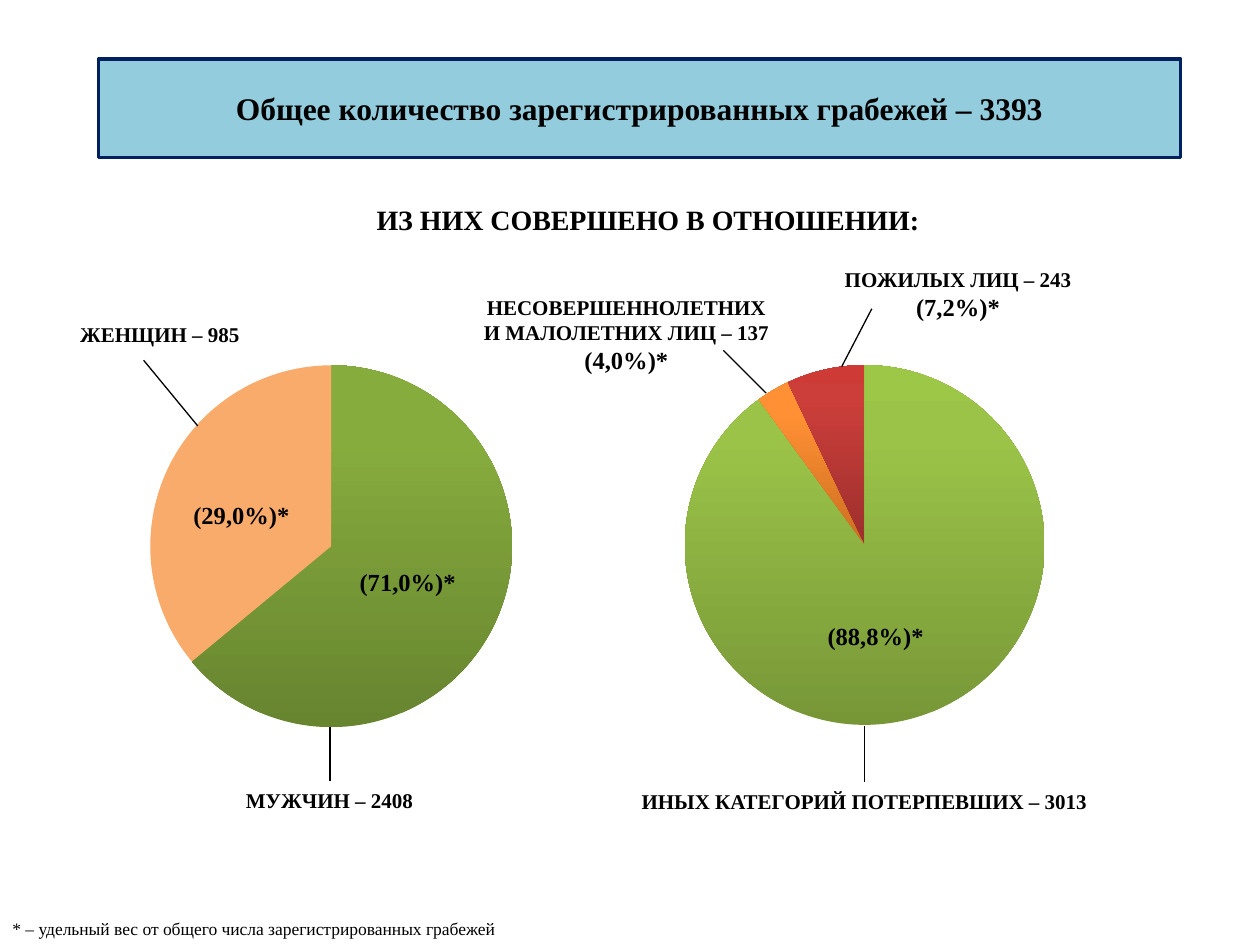
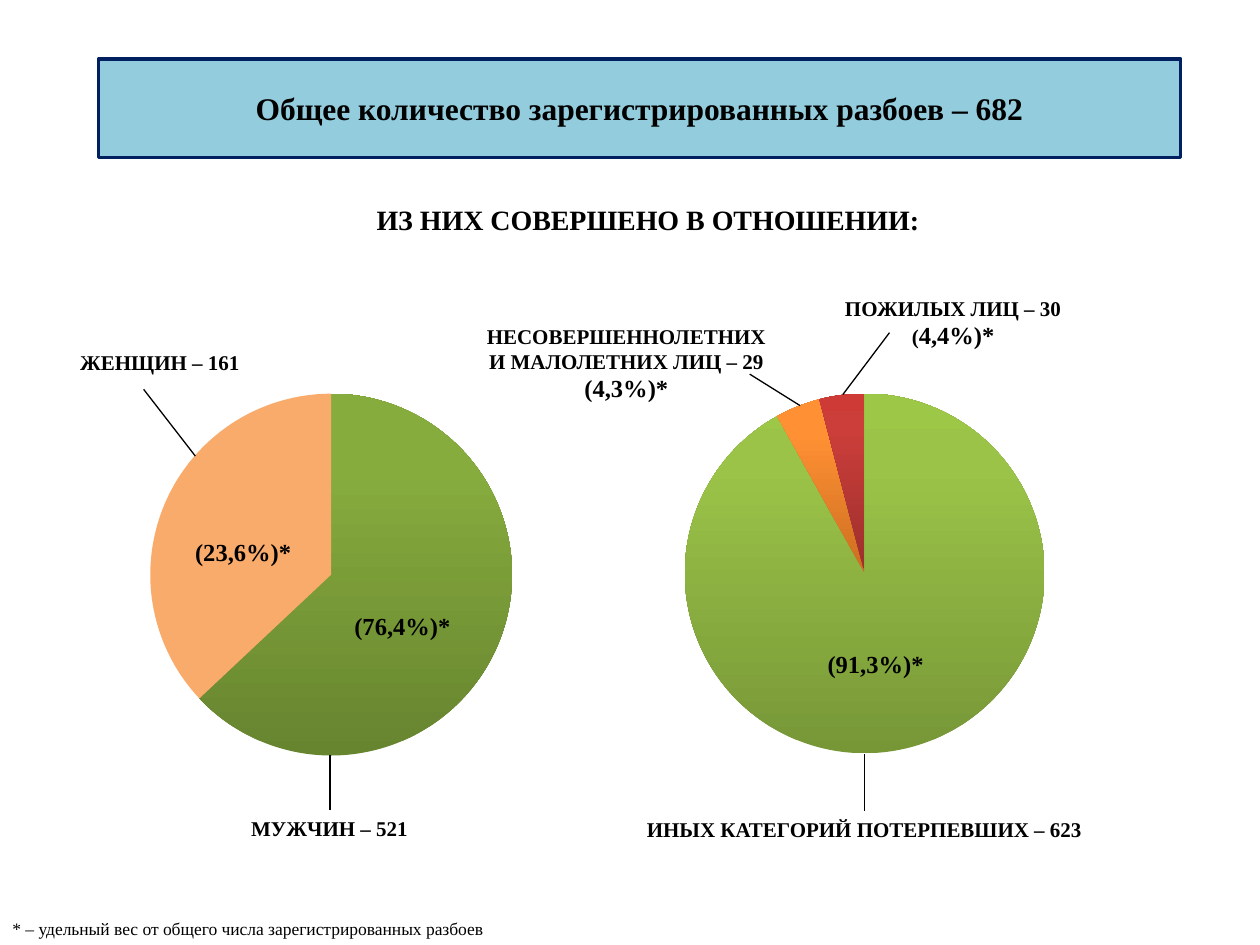
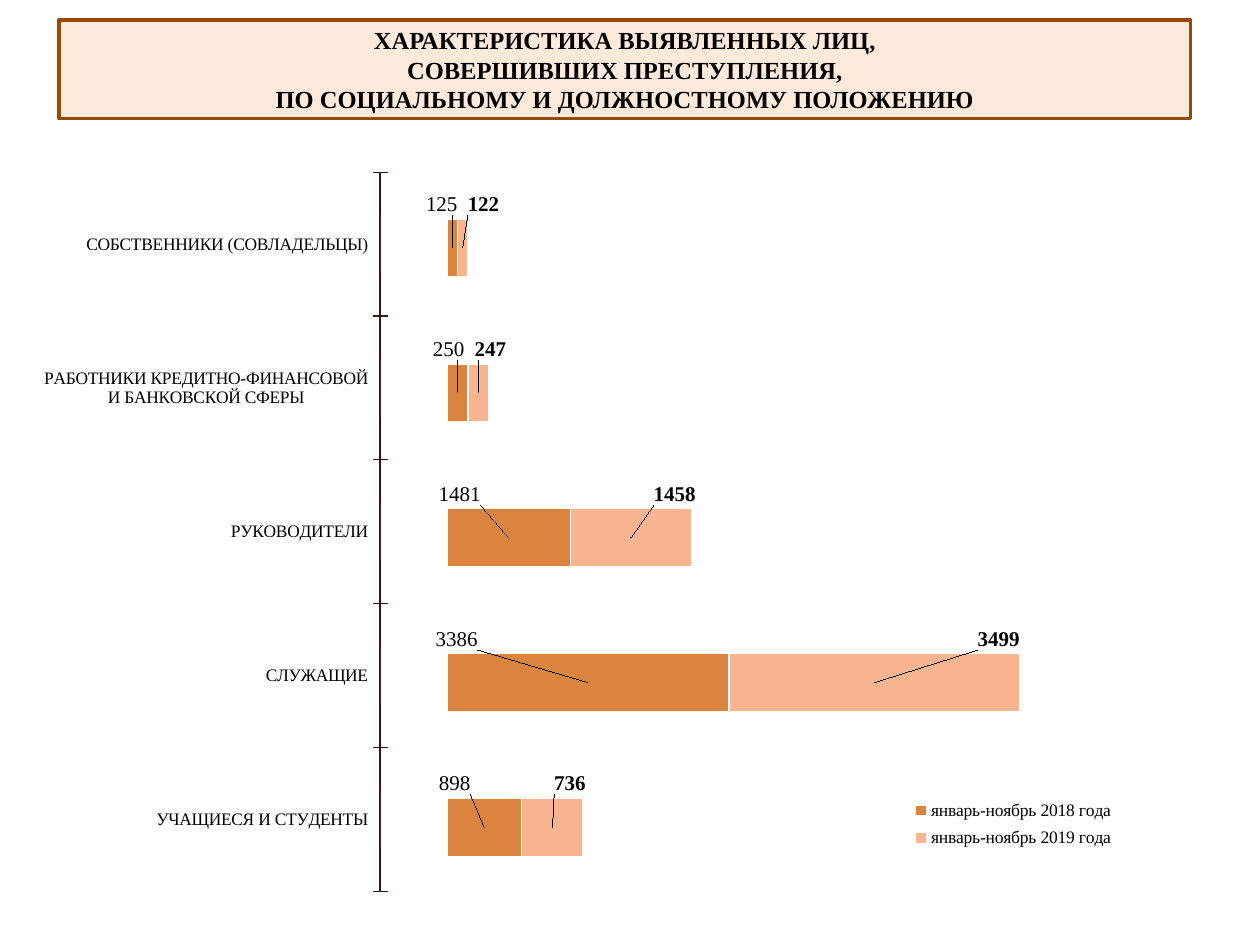
from copy import deepcopy
from dataclasses import dataclass, replace
from typing import NamedTuple

from pptx import Presentation
from pptx.chart import data as chart_data
from pptx.dml.color import RGBColor
from pptx.enum import chart as ch, shapes, text
from pptx.oxml import parse_xml
from pptx.oxml.ns import nsdecls, qn
from pptx.util import Pt


@dataclass(frozen=True)
class Theme:
    """Colours and type sizes; gradients run from the bottom up."""
    serif: str = "Times New Roman"
    chart_font: str = "Calibri"
    ink: str = "000000"
    separator: str = "FFFFFF"
    axis: str = "381514"
    crime_band: tuple = ("93CDDD", "002060")
    social_band: tuple = ("FDEADA", "984807")
    men: tuple = ("67842F", "87AC3E", "8AAE40")
    women: str = "F9AB6B"
    others: tuple = ("779737", "9BC348", "9DC746")
    minors: tuple = ("CC6E20", "FF9034", "FF9136")
    elderly: tuple = ("9C2F2D", "CB3E3A", "CE3B37")
    year_2018: str = "DB843D"
    year_2019: str = "F9B590"
    heading: float = 18
    subheading: float = 16
    share: float = 14
    label: float = 12
    small: float = 10
    band_line: float = 2
    hairline: float = 0.75


THEME = Theme()


@dataclass(frozen=True)
class Box:
    left: float
    top: float
    width: float
    height: float

    def lowered(self, drop: float) -> "Box":
        return replace(self, top=self.top + drop)

    def emu(self) -> tuple:
        return Pt(self.left), Pt(self.top), Pt(self.width), Pt(self.height)


class Words(NamedTuple):
    content: str
    size: float
    bold: bool = True


class Leader(NamedTuple):
    x1: float
    y1: float
    x2: float
    y2: float


@dataclass(frozen=True)
class CrimeReport:
    heading: str
    footnote: str
    footnote_width: float
    drop: float  # how far the pies and their labels sit below the first report's
    sexes: tuple
    ages: tuple
    women: str
    men: str
    others: str
    minors: tuple
    elderly: tuple
    elderly_width: float
    shares: tuple  # wording, left, top
    leaders: tuple


class Period(NamedTuple):
    name: str
    counts: tuple
    label_shifts: tuple  # points from the middle of each bar
    color: str
    bold: bool


CRIME_BAND = Box(56.2, 33.8, 618.5, 56.2)
SOCIAL_BAND = Box(33.8, 11.5, 646.6, 56.2)
SUBHEADING = Box(208.1, 112.3, 329, 26.6)
SEX_CHART, SEX_PLOT = Box(30.2, 199.4, 318.2, 226.8), Box(85.9, 208.8, 206.8, 206.8)
AGE_CHART, AGE_PLOT = Box(302.4, 140.4, 387.4, 334.8), Box(391.1, 208.7, 206.1, 205.6)
WOMEN = Box(33.8, 180, 115.2, 21.6)
MEN = Box(128.2, 446.4, 120.2, 21.6)
OTHERS = Box(340.6, 447.1, 306.7, 21.6)
MINORS = Box(268.6, 164.9, 178.6, 53.3)
ELDERLY = Box(473, 149, 149, 38.9)
MEN_LEADER = Leader(188.6, 415.4, 188.6, 446.4)
OTHERS_LEADER = Leader(493.9, 414.7, 493.9, 447.1)

AXIS_CHART, AXIS_PLOT = Box(25.2, 88.6, 423.4, 430.6), Box(216, 98.5, 31.3, 410.8)
BARS_CHART, BARS_PLOT = Box(229.7, 94.3, 527, 425.5), Box(255.5, 100.3, 380.5, 414)
BARS_LEGEND = Box(518, 453, 122, 36)
LABEL_RISE = -25

REPORTS = (
    CrimeReport(
        heading="Общее количество зарегистрированных грабежей – 3393",
        footnote="* – удельный вес от общего числа зарегистрированных грабежей",
        footnote_width=373, drop=0, sexes=(64, 36), ages=(90, 3, 7),
        women="ЖЕНЩИН – 985", men="МУЖЧИН – 2408",
        others="ИНЫХ КАТЕГОРИЙ ПОТЕРПЕВШИХ – 3013",
        minors=("И МАЛОЛЕТНИХ ЛИЦ – 137 ", "(4,0%)*"),
        elderly=("ПОЖИЛЫХ ЛИЦ – 243 ", "(7,2%)*"), elderly_width=149,
        shares=(("(71,0%)*", 197, 318.2), ("(29,0%)*", 102, 280.1),
                ("(88,8%)*", 464.4, 349.2)),
        leaders=(Leader(82.1, 205.9, 113, 243.4), Leader(413.3, 200.2, 437.8, 224.6),
                 Leader(481, 209.5, 498.2, 176.4)),
    ),
    CrimeReport(
        heading="Общее количество зарегистрированных разбоев – 682",
        footnote="* – удельный вес от общего числа зарегистрированных разбоев",
        footnote_width=298, drop=16.2, sexes=(63, 37), ages=(91, 4, 4),
        women="ЖЕНЩИН – 161", men="МУЖЧИН – 521",
        others="ИНЫХ КАТЕГОРИЙ ПОТЕРПЕВШИХ – 623",
        minors=("И МАЛОЛЕТНИХ ЛИЦ – 29 ", "(4,3%)*"),
        elderly=("ПОЖИЛЫХ ЛИЦ – 30 (", "4,4%)*"), elderly_width=143.3,
        shares=(("(76,4%)*", 194, 343.4), ("(23,6%)*", 103, 301),
                ("(91,3%)*", 464.4, 365.4)),
        leaders=(Leader(82.1, 222.5, 111.6, 260.6), Leader(428.4, 213.8, 457.2, 231.8),
                 Leader(481.7, 225.4, 508.3, 190.1)),
    ),
)

SOCIAL_HEADING = (
    "ХАРАКТЕРИСТИКА ВЫЯВЛЕННЫХ ЛИЦ,",
    "СОВЕРШИВШИХ ПРЕСТУПЛЕНИЯ,",
    "ПО СОЦИАЛЬНОМУ И ДОЛЖНОСТНОМУ ПОЛОЖЕНИЮ",
)
SOCIAL_GROUPS = (
    "УЧАЩИЕСЯ И СТУДЕНТЫ", "СЛУЖАЩИЕ", "РУКОВОДИТЕЛИ",
    "РАБОТНИКИ КРЕДИТНО-ФИНАНСОВОЙ И БАНКОВСКОЙ СФЕРЫ", "СОБСТВЕННИКИ (СОВЛАДЕЛЬЦЫ)",
)
PERIODS = (
    Period("январь-ноябрь 2018 года", (898, 3386, 1481, 250, 125),
           (-17, -75, -28, -5, -6), THEME.year_2018, False),
    Period("январь-ноябрь 2019 года", (736, 3499, 1458, 247, 122),
           (10, 71, 25, 7, 12), THEME.year_2019, True),
)


def rgb(color: str) -> RGBColor:
    return RGBColor.from_string(color)


def style_font(font, size: float, bold: bool = False, name: str = THEME.serif) -> None:
    font.name, font.size, font.bold = name, Pt(size), bold
    font.color.rgb = rgb(THEME.ink)


def write(frame, paragraphs: tuple, align=text.PP_ALIGN.CENTER) -> None:
    """Fill a text frame with paragraphs, each a tuple of Words."""
    for index, runs in enumerate(paragraphs):
        paragraph = frame.add_paragraph() if index else frame.paragraphs[0]
        paragraph.alignment = align
        for words in runs:
            run = paragraph.add_run()
            run.text = words.content
            style_font(run.font, words.size, words.bold)


def add_label(slide, box: Box, *paragraphs: tuple, anchor=text.MSO_ANCHOR.MIDDLE,
              align=text.PP_ALIGN.CENTER, wrap: bool = True) -> None:
    frame = slide.shapes.add_textbox(*box.emu()).text_frame
    frame.word_wrap = wrap
    frame.vertical_anchor = anchor
    write(frame, paragraphs, align)


def set_band_title(slide, box: Box, colors: tuple, lines: tuple, size: float) -> None:
    """Turn the title placeholder into a rounded, outlined band."""
    title = slide.shapes.title
    title.left, title.top, title.width, title.height = box.emu()
    title.element.spPr.find(qn("a:xfrm")).addnext(parse_xml(
        f'<a:prstGeom {nsdecls("a")} prst="roundRect"><a:avLst/></a:prstGeom>'))
    fill, outline = colors
    title.fill.solid()
    title.fill.fore_color.rgb = rgb(fill)
    title.line.color.rgb = rgb(outline)
    title.line.width = Pt(THEME.band_line)
    frame = title.text_frame
    frame.auto_size = text.MSO_AUTO_SIZE.NONE
    frame.word_wrap = True
    frame.vertical_anchor = text.MSO_ANCHOR.MIDDLE
    write(frame, tuple((Words(line, size),) for line in lines))


def add_leader(slide, leader: Leader, drop: float = 0) -> None:
    line = slide.shapes.add_connector(
        shapes.MSO_CONNECTOR.STRAIGHT, Pt(leader.x1), Pt(leader.y1 + drop),
        Pt(leader.x2), Pt(leader.y2 + drop))
    line.line.color.rgb = rgb(THEME.ink)
    line.line.width = Pt(THEME.hairline)
    line.element.spPr.append(parse_xml(f'<a:effectLst {nsdecls("a")}/>'))


def layout_xml(**settings):
    parts = "".join(f'<c:{tag} val="{value}"/>' for tag, value in settings.items())
    return parse_xml(f'<c:layout {nsdecls("c")}><c:manualLayout>{parts}'
                     "</c:manualLayout></c:layout>")


def edge_layout(outer: Box, inner: Box, **settings):
    """Layout placing the slide area inner within the chart area outer."""
    return layout_xml(
        **settings, xMode="edge", yMode="edge",
        x=(inner.left - outer.left) / outer.width,
        y=(inner.top - outer.top) / outer.height,
        w=inner.width / outer.width, h=inner.height / outer.height)


def add_chart(slide, kind, box: Box, plot: Box, categories: tuple, series: tuple):
    """Add a chart of (name, values) series with a fixed plot area."""
    figures = chart_data.CategoryChartData()
    figures.categories = categories
    for name, values in series:
        figures.add_series(name, values)
    chart = slide.shapes.add_chart(kind, *box.emu(), figures).chart
    chart.has_title = False
    chart.has_legend = False
    style_font(chart.font, THEME.small, name=THEME.chart_font)
    chart.plots[0].vary_by_categories = False
    area = next(chart.element.iter(qn("c:plotArea")))
    for automatic in area.findall(qn("c:layout")):
        area.remove(automatic)
    area.insert(0, edge_layout(box, plot, layoutTarget="inner"))
    return chart


def paint(fill, color) -> None:
    """Apply a plain colour, or the ends of a three-stop gradient."""
    if isinstance(color, str):
        fill.solid()
        fill.fore_color.rgb = rgb(color)
        return
    fill.gradient()
    fill.gradient_angle = 90
    first, last = fill.gradient_stops
    first.color.rgb, last.color.rgb = rgb(color[0]), rgb(color[-1])


def add_pie(slide, box: Box, plot: Box, values: tuple, colors: tuple) -> None:
    categories = tuple(str(number + 1) for number in range(len(values)))
    chart = add_chart(slide, ch.XL_CHART_TYPE.PIE, box, plot, categories,
                      (("Series 1", values),))
    for index, color in enumerate(colors):
        paint(chart.plots[0].series[0].points[index].format.fill, color)
    gradients = [color for color in colors if not isinstance(color, str)]
    for stops, color in zip(chart.element.iter(qn("a:gsLst")), gradients):
        middle = deepcopy(stops[0])
        middle.set("pos", "80000")
        middle[0].set("val", color[1])
        stops.insert(1, middle)


def build_crime_slide(deck, report: CrimeReport) -> None:
    slide = deck.slides.add_slide(deck.slide_layouts[5])
    drop = report.drop
    top, left = text.MSO_ANCHOR.TOP, text.PP_ALIGN.LEFT
    set_band_title(slide, CRIME_BAND, THEME.crime_band, (report.heading,), THEME.heading)
    add_label(slide, SUBHEADING, (Words("ИЗ НИХ СОВЕРШЕНО В ОТНОШЕНИИ:", THEME.subheading),),
              anchor=top, align=left, wrap=False)
    add_label(slide, Box(0, 521.3, report.footnote_width, 18.7),
              (Words(report.footnote, THEME.small, False),), anchor=top, align=left)

    add_pie(slide, SEX_CHART.lowered(drop), SEX_PLOT.lowered(drop), report.sexes,
            (THEME.men, THEME.women))
    add_pie(slide, AGE_CHART.lowered(drop), AGE_PLOT.lowered(drop), report.ages,
            (THEME.others, THEME.minors, THEME.elderly))

    def counted(group: tuple) -> tuple:
        count, share = group
        return Words(count, THEME.label), Words(share, THEME.share)

    add_label(slide, replace(ELDERLY, width=report.elderly_width).lowered(drop),
              counted(report.elderly), anchor=top)
    add_label(slide, MINORS.lowered(drop), (Words("НЕСОВЕРШЕННОЛЕТНИХ", THEME.label),),
              counted(report.minors), anchor=top)
    for box, caption in ((WOMEN, report.women), (MEN, report.men), (OTHERS, report.others)):
        add_label(slide, box.lowered(drop), (Words(caption, THEME.label),))
    for share, x, y in report.shares:
        add_label(slide, Box(x, y, 72, 28), (Words(share, THEME.share),))
    for leader in report.leaders:
        add_leader(slide, leader)
    for leader in (MEN_LEADER, OTHERS_LEADER):
        add_leader(slide, leader, drop)


def hide_value_axis(chart, maximum: float) -> None:
    axis = chart.value_axis
    axis.minimum_scale, axis.maximum_scale = 0, maximum
    axis.has_major_gridlines = False
    axis.visible = False


def add_group_axis(slide) -> None:
    """Draw the vertical axis with the names of the social groups."""
    zeros = (0,) * len(SOCIAL_GROUPS)
    chart = add_chart(slide, ch.XL_CHART_TYPE.BAR_STACKED, AXIS_CHART, AXIS_PLOT,
                      SOCIAL_GROUPS, (("Series 1", zeros), ("Series 2", zeros)))
    hide_value_axis(chart, 1)
    axis = chart.category_axis
    axis.major_tick_mark = ch.XL_TICK_MARK.CROSS
    axis.format.line.color.rgb = rgb(THEME.axis)
    axis.format.line.width = Pt(THEME.hairline)
    style_font(axis.tick_labels.font, THEME.small)


def label_bars(series, period: Period) -> None:
    labels = series.data_labels
    labels.show_value = True
    style_font(labels.font, THEME.label, period.bold)
    for index in range(len(period.counts)):
        label = series.points[index].data_label
        label.position = ch.XL_LABEL_POSITION.CENTER
        style_font(label.font, THEME.label, period.bold)
    marks = series.data_labels._element.findall(qn("c:dLbl"))
    for mark, shift in zip(marks, period.label_shifts):
        mark.insert(1, layout_xml(x=shift / BARS_CHART.width,
                                  y=LABEL_RISE / BARS_CHART.height))


def add_period_bars(slide) -> None:
    categories = tuple(str(number + 1) for number in range(len(SOCIAL_GROUPS)))
    chart = add_chart(slide, ch.XL_CHART_TYPE.BAR_STACKED, BARS_CHART, BARS_PLOT, categories,
                      tuple((period.name, period.counts) for period in PERIODS))
    hide_value_axis(chart, 8000)
    chart.category_axis.visible = False
    bars = chart.plots[0]
    bars.gap_width, bars.overlap = 150, 100
    for series, period in zip(bars.series, PERIODS):
        paint(series.format.fill, period.color)
        series.format.line.color.rgb = rgb(THEME.separator)
        series.format.line.width = Pt(THEME.hairline)
        label_bars(series, period)
    chart.has_legend = True
    legend = chart.legend
    legend.position = ch.XL_LEGEND_POSITION.RIGHT
    legend.include_in_layout = False
    style_font(legend.font, THEME.small)
    next(chart.element.iter(qn("c:legendPos"))).addnext(edge_layout(BARS_CHART, BARS_LEGEND))
    for automatic in next(chart.element.iter(qn("c:legend"))).findall(qn("c:layout"))[1:]:
        automatic.getparent().remove(automatic)


def build_social_slide(deck) -> None:
    slide = deck.slides.add_slide(deck.slide_layouts[5])
    set_band_title(slide, SOCIAL_BAND, THEME.social_band, SOCIAL_HEADING, THEME.share)
    add_group_axis(slide)
    add_period_bars(slide)


def main() -> None:
    deck = Presentation()
    deck.slide_width, deck.slide_height = Pt(720), Pt(540)
    for report in REPORTS:
        build_crime_slide(deck, report)
    build_social_slide(deck)
    deck.save("out.pptx")


if __name__ == "__main__":
    main()
